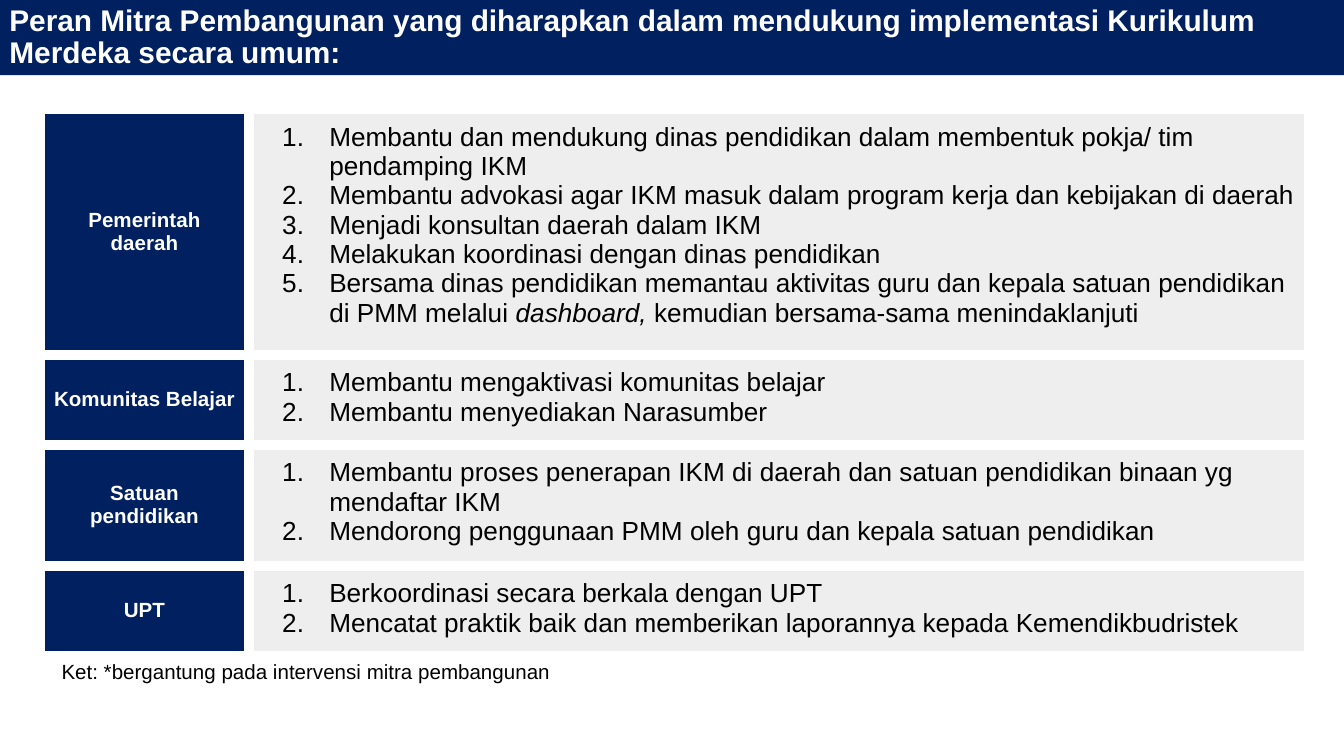
import pptx
import pptx.util
import pptx.dml.color
import pptx.enum.text
import pptx.oxml.ns
from lxml import etree

Inches, Pt = pptx.util.Inches, pptx.util.Pt
ALIGN, ANCHOR = pptx.enum.text.PP_ALIGN, pptx.enum.text.MSO_ANCHOR

WIDTH = 10
HEIGHT = WIDTH * 9 / 16
FONT = "Arial"
COLORS = {"navy": "002060", "panel": "EEEEEE", "white": "FFFFFF", "black": "000000"}

HEADING = (
    "Peran Mitra Pembangunan yang diharapkan dalam mendukung "
    "implementasi Kurikulum Merdeka secara umum:"
)
ROLES = [
    ("Pemerintah daerah", 1.83, [
        ["Membantu dan mendukung dinas pendidikan dalam membentuk pokja/ tim pendamping IKM"],
        ["Membantu advokasi agar IKM masuk dalam program kerja dan kebijakan di daerah"],
        ["Menjadi konsultan daerah dalam IKM"],
        ["Melakukan koordinasi dengan dinas pendidikan"],
        ["Bersama dinas pendidikan memantau aktivitas guru dan kepala satuan pendidikan di PMM melalui ",
         "dashboard, ", "kemudian bersama-sama menindaklanjuti"],
    ]),
    ("Komunitas Belajar", 0.67, [
        ["Membantu mengaktivasi komunitas belajar"],
        ["Membantu menyediakan Narasumber"],
    ]),
    ("Satuan pendidikan", 0.9, [
        ["Membantu proses penerapan IKM di daerah dan satuan pendidikan binaan yg mendaftar IKM"],
        ["Mendorong penggunaan PMM oleh guru dan kepala satuan pendidikan"],
    ]),
    ("UPT", 0.67, [
        ["Berkoordinasi secara berkala dengan UPT"],
        ["Mencatat praktik baik dan memberikan laporannya kepada Kemendikbudristek"],
    ]),
]
FOOTNOTE = "Ket: *bergantung pada intervensi mitra pembangunan"
COLUMNS = (1.55, 7.89)


def rgb(name):
    return pptx.dml.color.RGBColor.from_string(COLORS[name])


def paint(part, color):
    part.fill.solid()
    part.fill.fore_color.rgb = rgb(color)


def style(paragraph, size, color, bold=False):
    font = paragraph.font
    font.name, font.size, font.bold = FONT, Pt(size), bold
    font.color.rgb = rgb(color)


def pad(part, x, y):
    part.margin_left = part.margin_right = Inches(x)
    part.margin_top = part.margin_bottom = Inches(y)


def add_child(parent, tag, **attributes):
    return etree.SubElement(parent, pptx.oxml.ns.qn(tag), attributes)


def number(paragraph):
    properties = paragraph._p.get_or_add_pPr()
    properties.set("marL", str(Inches(0.5)))
    properties.set("indent", str(Inches(-0.35)))
    add_child(add_child(properties, "a:buClr"), "a:srgbClr", val=COLORS["black"])
    add_child(properties, "a:buFont", typeface=FONT)
    add_child(properties, "a:buAutoNum", type="arabicPeriod")


def format_cell(cell, color):
    properties = cell._tc.get_or_add_tcPr()
    for side in ("a:lnL", "a:lnR", "a:lnT", "a:lnB"):
        border = add_child(properties, side, w=str(Pt(6)))
        add_child(add_child(border, "a:solidFill"), "a:srgbClr", val=COLORS["white"])
    paint(cell, color)
    pad(cell, 0.1, 0.1)


def add_heading(slide):
    heading = slide.shapes.title
    heading.left, heading.top = 0, 0
    heading.width, heading.height = Inches(WIDTH), Inches(0.56)
    paint(heading, "navy")
    frame = heading.text_frame
    frame.text = HEADING
    frame.word_wrap = True
    frame.auto_size = pptx.enum.text.MSO_AUTO_SIZE.NONE
    frame.vertical_anchor = ANCHOR.MIDDLE
    pad(frame, 0.07, 0.04)
    paragraph = frame.paragraphs[0]
    paragraph.alignment = ALIGN.LEFT
    paragraph.line_spacing = 0.9
    style(paragraph, 16, "white", True)


def add_roles(slide):
    total = sum(height for _, height, _ in ROLES)
    roles = slide.shapes.add_table(
        len(ROLES), len(COLUMNS), Inches(0.3), Inches(0.81),
        Inches(sum(COLUMNS)), Inches(total),
    ).table
    roles.first_row = roles.horz_banding = False
    for column, width in zip(roles.columns, COLUMNS):
        column.width = Inches(width)
    for row, (partner, height, duties) in zip(roles.rows, ROLES):
        row.height = Inches(height)
        partner_cell, duties_cell = row.cells
        format_cell(partner_cell, "navy")
        partner_cell.text = partner
        partner_cell.vertical_anchor = ANCHOR.MIDDLE
        paragraph = partner_cell.text_frame.paragraphs[0]
        paragraph.alignment = ALIGN.CENTER
        style(paragraph, 11, "white", True)

        format_cell(duties_cell, "panel")
        frame = duties_cell.text_frame
        for index, pieces in enumerate(duties):
            paragraph = frame.add_paragraph() if index else frame.paragraphs[0]
            number(paragraph)
            style(paragraph, 14, "black")
            for position, piece in enumerate(pieces):
                run = paragraph.add_run()
                run.text = piece
                if position == 1:
                    run.font.italic = True


def add_footnote(slide):
    footnote = slide.shapes.add_textbox(Inches(0.36), Inches(4.81), Inches(9.13), Inches(0.39))
    frame = footnote.text_frame
    frame.word_wrap = True
    frame.auto_size = pptx.enum.text.MSO_AUTO_SIZE.SHAPE_TO_FIT_TEXT
    pad(frame, 0.1, 0.1)
    frame.text = FOOTNOTE
    style(frame.paragraphs[0], 11, "black")


def main():
    deck = pptx.Presentation()
    deck.slide_width, deck.slide_height = Inches(WIDTH), Inches(HEIGHT)
    slide = deck.slides.add_slide(deck.slide_layouts[5])
    add_heading(slide)
    add_roles(slide)
    add_footnote(slide)
    deck.save("out.pptx")


if __name__ == "__main__":
    main()
